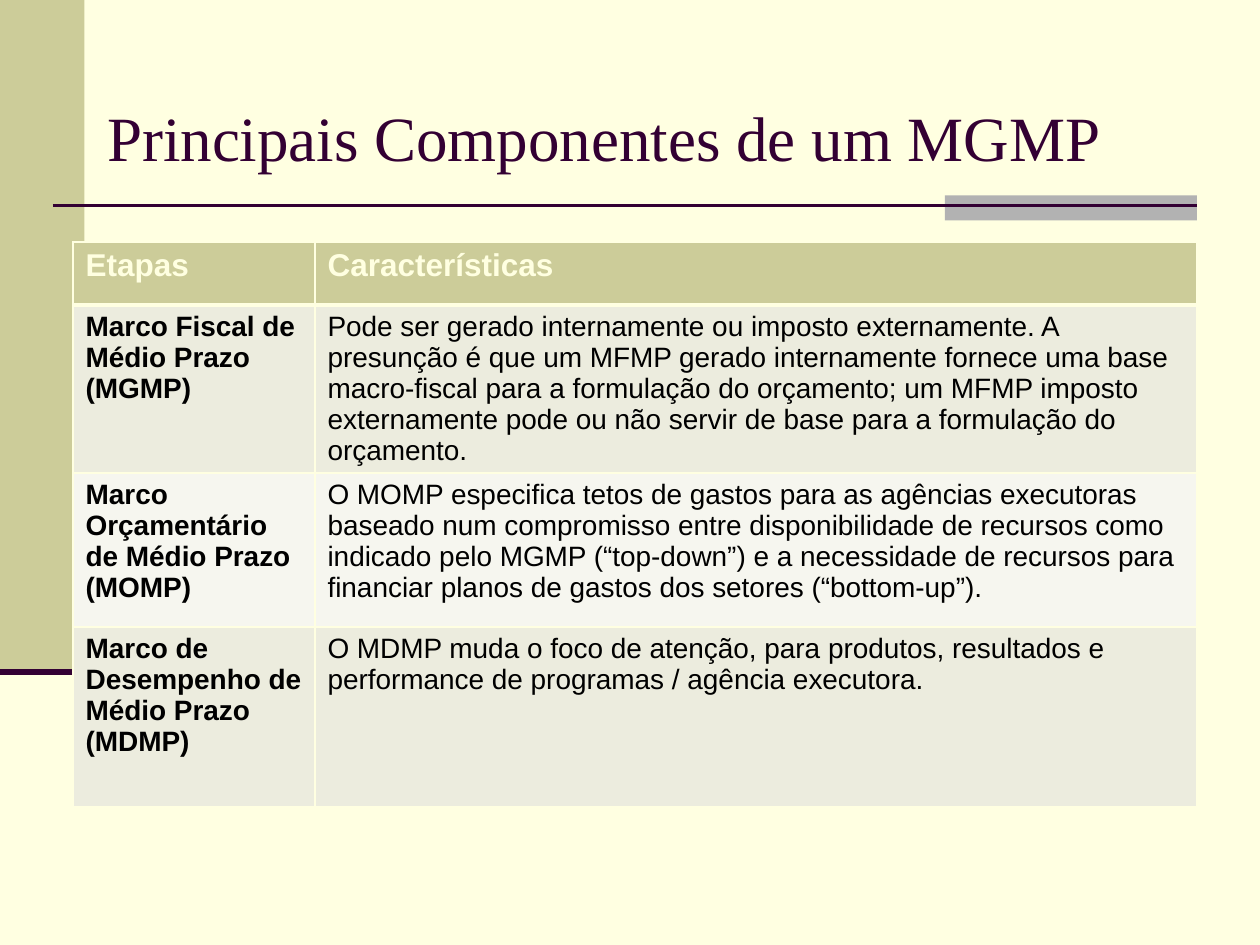
from dataclasses import dataclass

from lxml.etree import SubElement
from pptx import Presentation
from pptx.dml.color import RGBColor
from pptx.enum.shapes import MSO_CONNECTOR, MSO_SHAPE
from pptx.enum.text import MSO_ANCHOR, PP_ALIGN
from pptx.oxml.ns import qn
from pptx.util import Inches, Pt


@dataclass(frozen=True)
class Theme:
    background: str = "FFFFE1"
    olive: str = "CCCC99"
    gray: str = "B2B2B2"
    plum: str = "330033"
    text: str = "000000"
    bands: tuple = ("ECECDE", "F6F6EF")
    title_font: str = "Times New Roman"
    body_font: str = "Arial"
    title_size: int = 36
    header_size: int = 18
    body_size: int = 16


COLUMN_WIDTHS = (1.92, 7)
ROW_HEIGHTS = (0.5, 1.22, 1.22, 1.43)
ROWS = (
    ("Etapas", "Características"),
    (
        "Marco Fiscal de Médio Prazo (MGMP)",
        "Pode ser gerado internamente ou imposto externamente. A presunção é que "
        "um MFMP gerado internamente fornece uma base macro-fiscal para a "
        "formulação do orçamento; um MFMP imposto externamente pode ou não servir "
        "de base para a formulação do orçamento.",
    ),
    (
        "Marco Orçamentário de Médio Prazo (MOMP)",
        "O MOMP especifica tetos de gastos para as agências executoras baseado num "
        "compromisso entre disponibilidade de recursos como indicado pelo MGMP "
        "(“top-down”) e a necessidade de recursos para financiar planos de gastos "
        "dos setores (“bottom-up”).",
    ),
    (
        "Marco de Desempenho de Médio Prazo (MDMP)",
        "O MDMP muda o foco de atenção, para produtos, resultados e performance de "
        "programas / agência executora.",
    ),
)


class SlideBuilder:
    def __init__(self, page, theme):
        self.page = page
        self.theme = theme
        page.background.fill.solid()
        page.background.fill.fore_color.rgb = RGBColor.from_string(theme.background)

    def block(self, left, top, width, height, color):
        box = self.page.shapes.add_shape(
            MSO_SHAPE.RECTANGLE, Inches(left), Inches(top), Inches(width), Inches(height)
        )
        box.shadow.inherit = False
        box.fill.solid()
        box.fill.fore_color.rgb = RGBColor.from_string(color)
        box.line.fill.background()

    def rule(self, left, right, top, weight):
        line = self.page.shapes.add_connector(
            MSO_CONNECTOR.STRAIGHT, Inches(left), Inches(top), Inches(right), Inches(top)
        )
        line.line.color.rgb = RGBColor.from_string(self.theme.plum)
        line.line.width = Pt(weight)
        SubElement(line.element.spPr, qn("a:effectLst"))

    def title(self, text, left, top, width, height):
        box = self.page.shapes.title
        box.left, box.top = Inches(left), Inches(top)
        box.width, box.height = Inches(width), Inches(height)
        frame = box.text_frame
        frame.text = text
        frame.vertical_anchor = MSO_ANCHOR.TOP
        frame.margin_top = Inches(0.11)
        para = frame.paragraphs[0]
        para.alignment = PP_ALIGN.LEFT
        self.style(para, self.theme.title_font, self.theme.title_size, self.theme.plum)

    def style(self, para, font_name, size, color, bold=False):
        para.font.name = font_name
        para.font.size = Pt(size)
        para.font.bold = bold
        para.font.color.rgb = RGBColor.from_string(color)

    def borders(self, cell, bottom):
        """Draw all four edges, with the bottom weight given in points."""
        properties = cell._tc.get_or_add_tcPr()
        weights = {"a:lnL": 1, "a:lnR": 1, "a:lnT": 1, "a:lnB": bottom}
        for index, (tag, weight) in enumerate(weights.items()):
            edge = properties.makeelement(qn(tag), {"w": str(Pt(weight))})
            fill = SubElement(edge, qn("a:solidFill"))
            SubElement(fill, qn("a:srgbClr"), val=self.theme.background)
            properties.insert(index, edge)

    def table(self, rows, left, top, widths, heights):
        theme = self.theme
        table = self.page.shapes.add_table(
            len(rows), len(widths), Inches(left), Inches(top),
            Inches(sum(widths)), Inches(sum(heights)),
        ).table
        for column, width in zip(table.columns, widths):
            column.width = Inches(width)
        for row, height in zip(table.rows, heights):
            row.height = Inches(height)
        for row_index, texts in enumerate(rows):
            header = row_index == 0
            fill = theme.olive if header else theme.bands[(row_index - 1) % 2]
            size = theme.header_size if header else theme.body_size
            color = theme.background if header else theme.text
            for column_index, text in enumerate(texts):
                cell = table.cell(row_index, column_index)
                cell.text = text
                cell.fill.solid()
                cell.fill.fore_color.rgb = RGBColor.from_string(fill)
                self.borders(cell, bottom=3 if header else 1)
                self.style(cell.text_frame.paragraphs[0], theme.body_font, size, color,
                           bold=header or column_index == 0)


def main():
    deck = Presentation()
    deck.slide_width, deck.slide_height = Inches(10), Inches(7.5)
    theme = Theme()
    slide = SlideBuilder(deck.slides.add_slide(deck.slide_layouts[5]), theme)
    slide.block(0, 0, 0.67, 5.33, theme.olive)
    slide.block(7.5, 1.55, 2, 0.2, theme.gray)
    slide.rule(0.42, 9.5, 1.63, 1.5)
    slide.rule(0, 0.67, 5.33, 3.5)
    slide.title("Principais Componentes de um MGMP", 0.75, 0.67, 8.5, 1.25)
    slide.table(ROWS, 0.58, 1.92, COLUMN_WIDTHS, ROW_HEIGHTS)
    deck.save("out.pptx")


if __name__ == "__main__":
    main()
